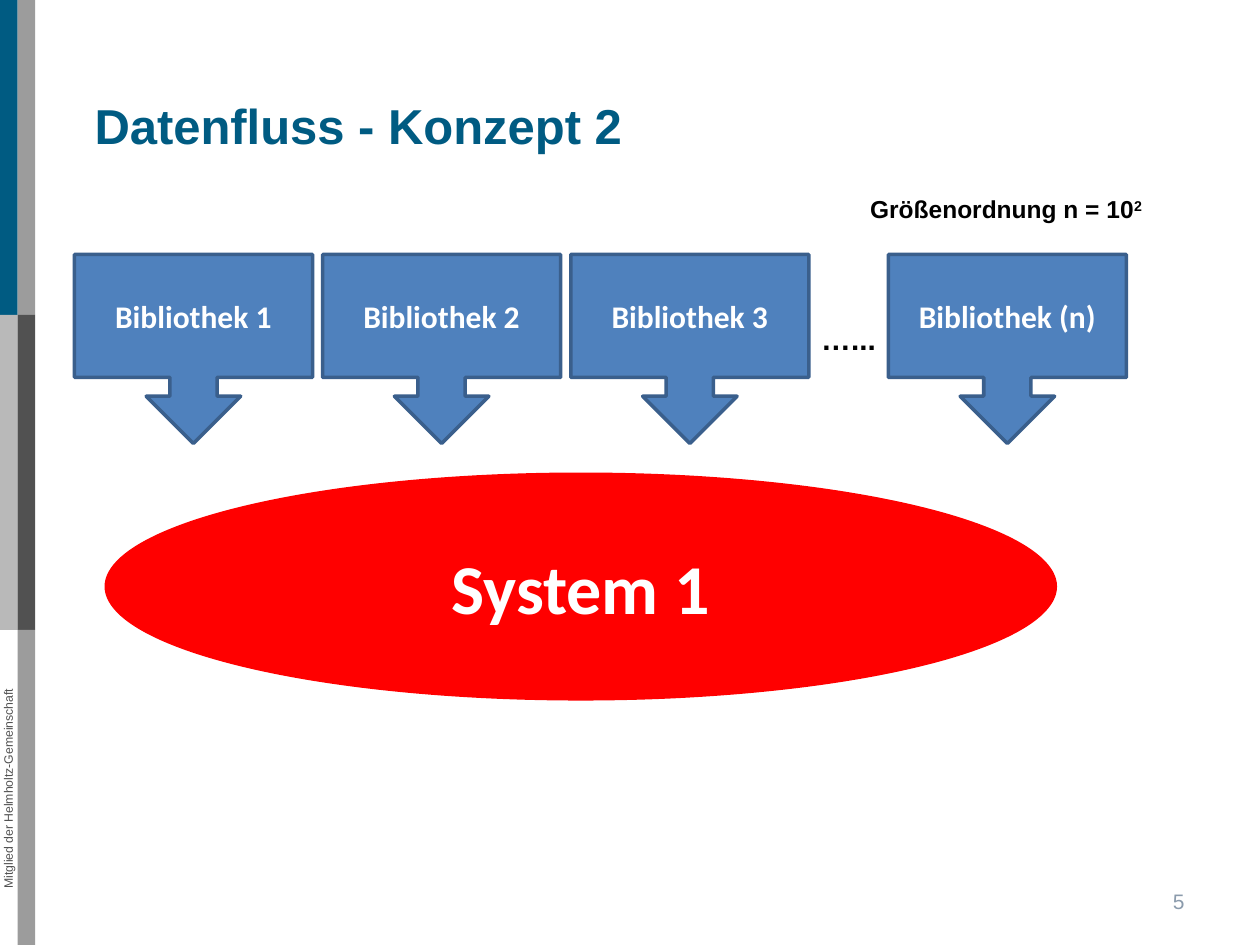
from pptx import Presentation
from pptx import util as u
from pptx.dml.color import RGBColor
from pptx.enum import shapes, text

TEAL, LIGHT_GREY, MID_GREY, DARK_GREY = "005B82", "B9B9B9", "9C9C9C", "515151"
WHITE, BLACK, RED = "FFFFFF", "000000", "FF0000"
BLUE, DARK_BLUE, PAGE_GREY = "4F81BD", "3A5F8C", "8B9BAC"
LEFT, CENTER, RIGHT = text.PP_ALIGN.LEFT, text.PP_ALIGN.CENTER, text.PP_ALIGN.RIGHT
TOP, MIDDLE = text.MSO_ANCHOR.TOP, text.MSO_ANCHOR.MIDDLE


def color(hex_code):
    return RGBColor.from_string(hex_code)


def write(shape, content, size, font="Arial", fill=BLACK, bold=False, align=CENTER,
          anchor=TOP, insets=(0.1, 0.05), wrap=True, before=0, superscript=""):
    """Fill a shape with one formatted paragraph and an optional superscript."""
    frame = shape.text_frame
    frame.auto_size = text.MSO_AUTO_SIZE.NONE
    frame.word_wrap = wrap
    frame.vertical_anchor = anchor
    frame.margin_left = frame.margin_right = u.Inches(insets[0])
    frame.margin_top = frame.margin_bottom = u.Inches(insets[1])
    paragraph = frame.paragraphs[0]
    paragraph.alignment = align
    paragraph.space_before = u.Pt(before)
    for part in filter(None, (content, superscript)):
        run = paragraph.add_run()
        run.text = part
        run.font.name, run.font.size, run.font.bold = font, u.Pt(size), bold
        run.font.color.rgb = color(fill)
    if superscript:
        run._r.get_or_add_rPr().set("baseline", "30000")


def add_preset(slide, preset, box, fill, outline=None):
    shape = slide.shapes.add_shape(preset, *map(u.Inches, box))
    shape.shadow.inherit = False
    shape.fill.solid()
    shape.fill.fore_color.rgb = color(fill)
    if outline:
        shape.line.color.rgb = color(outline)
        shape.line.width = u.Pt(2)
    else:
        shape.line.fill.background()
    return shape


def add_label(slide, content, box, rotation=0, **style):
    label = slide.shapes.add_textbox(*map(u.Inches, box))
    label.rotation = rotation
    write(label, content, **style)


def add_title(slide, content):
    title = slide.shapes.title
    title.left, title.top, title.width, title.height = map(u.Inches, (0.75, 0.76, 8.86, 0.63))
    write(title, content, 28, fill=TEAL, bold=True, align=LEFT, insets=(0, 0), before=5.6)


def add_side_bars(slide):
    bar_width, bar_height = 0.14, 2.5
    columns = ((TEAL, LIGHT_GREY), (MID_GREY, DARK_GREY, MID_GREY))
    for column, fills in enumerate(columns):
        for row, fill in enumerate(fills):
            box = (column * bar_width, row * bar_height, bar_width, bar_height)
            add_preset(slide, shapes.MSO_SHAPE.RECTANGLE, box, fill)


def add_library(slide, name, left):
    library = add_preset(slide, shapes.MSO_SHAPE.DOWN_ARROW_CALLOUT,
                         (left, 2.02, 1.89, 1.5), BLUE, DARK_BLUE)
    for index, value in enumerate((0.25, 0.25, 0.25, 0.65)):
        library.adjustments[index] = value
    write(library, name, 18, font="Calibri", fill=WHITE, bold=True, anchor=MIDDLE)


def main():
    deck = Presentation()
    deck.slide_width, deck.slide_height = u.Inches(10), u.Inches(7.5)
    slide = deck.slides.add_slide(deck.slide_layouts[5])

    # Page frame: side bars, membership line, title, page number
    add_side_bars(slide)
    add_label(slide, "Mitglied der Helmholtz-Gemeinschaft", (-1.18, 6.2, 2.49, 0.12),
              rotation=270, size=7, fill=DARK_GREY, insets=(0, 0))
    add_title(slide, "Datenfluss - Konzept 2")
    add_label(slide, "5", (7.17, 6.95, 2.33, 0.4), size=12, fill=PAGE_GREY,
              align=RIGHT, anchor=MIDDLE)

    # Libraries feeding the system
    for index in range(3):
        add_library(slide, f"Bibliothek {index + 1}", 0.59 + index * 1.97)
    add_library(slide, "Bibliothek (n)", 7.05)

    # Central system
    system = add_preset(slide, shapes.MSO_SHAPE.OVAL, (0.83, 3.75, 7.56, 1.81), RED)
    write(system, "System 1", 40, font="Calibri", fill=WHITE, bold=True, anchor=MIDDLE)

    # Number of libraries
    add_label(slide, "…...", (6.42, 2.5, 0.63, 0.38), size=17, bold=True, wrap=False)
    add_label(slide, "Größenordnung n = 10", (6.81, 1.49, 2.35, 0.33), size=14,
              bold=True, wrap=False, superscript="2")

    deck.save("out.pptx")


if __name__ == "__main__":
    main()
